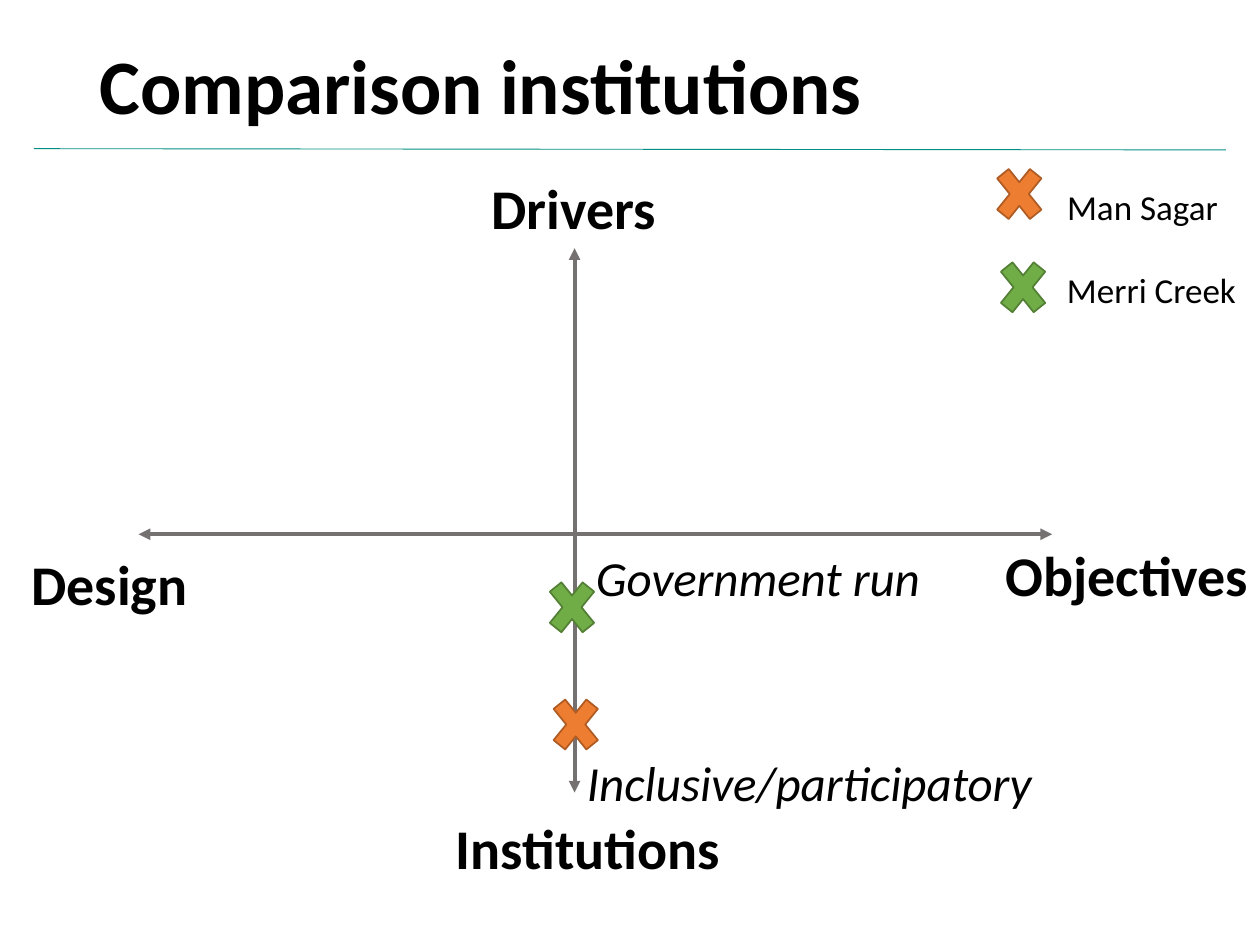
"""Build a slide comparing two institutions on a four-way axis diagram."""
from lxml import etree
from pptx import Presentation
from pptx.dml.color import RGBColor
from pptx.enum.shapes import MSO_CONNECTOR, MSO_SHAPE
from pptx.enum.text import MSO_ANCHOR
from pptx.oxml.ns import qn
from pptx.util import Inches, Pt

STRAIGHT = MSO_CONNECTOR.STRAIGHT
CROSS = MSO_SHAPE.MATH_MULTIPLY
MIDDLE = MSO_ANCHOR.MIDDLE
TOP = MSO_ANCHOR.TOP

BLACK = RGBColor(0x00, 0x00, 0x00)
TEAL = RGBColor(0x00, 0x8E, 0x83)
GRAY = RGBColor(0x76, 0x71, 0x71)
ORANGE = RGBColor(0xED, 0x7D, 0x31)
DARK_ORANGE = RGBColor(0xAF, 0x5C, 0x24)
GREEN = RGBColor(0x70, 0xAD, 0x47)
DARK_GREEN = RGBColor(0x53, 0x80, 0x35)

FONT = "Calibri"
CROSS_SIZE = (0.5, 0.62)
TITLE = ("Comparison institutions", (0.69, 0.32, 8.62, 0.78))
RULE = (0.27, 1.18, 9.73, 1.19)
AXES = [(4.56, 6.29, 4.56, 1.97), (1.1, 4.24, 8.35, 4.24)]
AXIS_NAMES = [
    ("Drivers", (3.8, 1.33, 1.52, 0.64)),
    ("Objectives", (7.88, 4.24, 2.15, 0.64)),
    ("Institutions", (3.52, 6.41, 2.33, 0.64)),
    ("Design", (0.15, 4.31, 1.45, 0.64)),
]
POSITIONS = [
    ("Government run", (4.63, 4.3, 2.82, 0.57)),
    ("Inclusive/participatory", (4.56, 5.92, 4.06, 0.57)),
]
LEGEND = [
    ("Man Sagar", (8.37, 1.42, 1.41, 0.44)),
    ("Merri Creek", (8.37, 2.08, 1.56, 0.44)),
]
SITES = [
    (ORANGE, DARK_ORANGE, [(7.84, 1.23), (4.32, 5.44)]),
    (GREEN, DARK_GREEN, [(7.87, 1.97), (4.29, 4.51)]),
]


def add_line(slide, ends, color, width, arrows=False):
    connector = slide.shapes.add_connector(STRAIGHT, *map(Inches, ends))
    connector.line.color.rgb = color
    connector.line.width = Pt(width)
    if arrows:
        line = connector.line._get_or_add_ln()
        for end in ("a:headEnd", "a:tailEnd"):
            etree.SubElement(line, qn(end), type="triangle")
    etree.SubElement(connector._element.spPr, qn("a:effectLst"))


def add_text(slide, text, box, size, bold=False, italic=False, wrap=False, anchor=TOP):
    frame = slide.shapes.add_textbox(*map(Inches, box)).text_frame
    frame.word_wrap = wrap
    frame.vertical_anchor = anchor
    paragraph = frame.paragraphs[0]
    run = paragraph.add_run()
    run.text = text
    run.font.name = FONT
    run.font.size = Pt(size)
    run.font.bold = bold
    run.font.italic = italic
    run.font.color.rgb = BLACK
    return paragraph


def add_cross(slide, corner, fill, outline):
    shape = slide.shapes.add_shape(CROSS, *map(Inches, corner + CROSS_SIZE))
    shape.shadow.inherit = False
    shape.fill.solid()
    shape.fill.fore_color.rgb = fill
    shape.line.color.rgb = outline
    shape.line.width = Pt(1)


def main():
    presentation = Presentation()
    presentation.slide_width = Inches(10)
    presentation.slide_height = Inches(7.5)
    slide = presentation.slides.add_slide(presentation.slide_layouts[6])

    add_line(slide, RULE, TEAL, 0.5)
    title = add_text(slide, *TITLE, 44, bold=True, wrap=True, anchor=MIDDLE)
    title.line_spacing = 0.9
    for ends in AXES:
        add_line(slide, ends, GRAY, 2.25, arrows=True)
    for text, box in AXIS_NAMES:
        add_text(slide, text, box, 32, bold=True)
    for text, box in POSITIONS:
        add_text(slide, text, box, 28, italic=True, wrap=True)
    for text, box in LEGEND:
        add_text(slide, text, box, 20)
    for fill, outline, corners in SITES:
        for corner in corners:
            add_cross(slide, corner, fill, outline)

    presentation.save("out.pptx")


if __name__ == "__main__":
    main()
